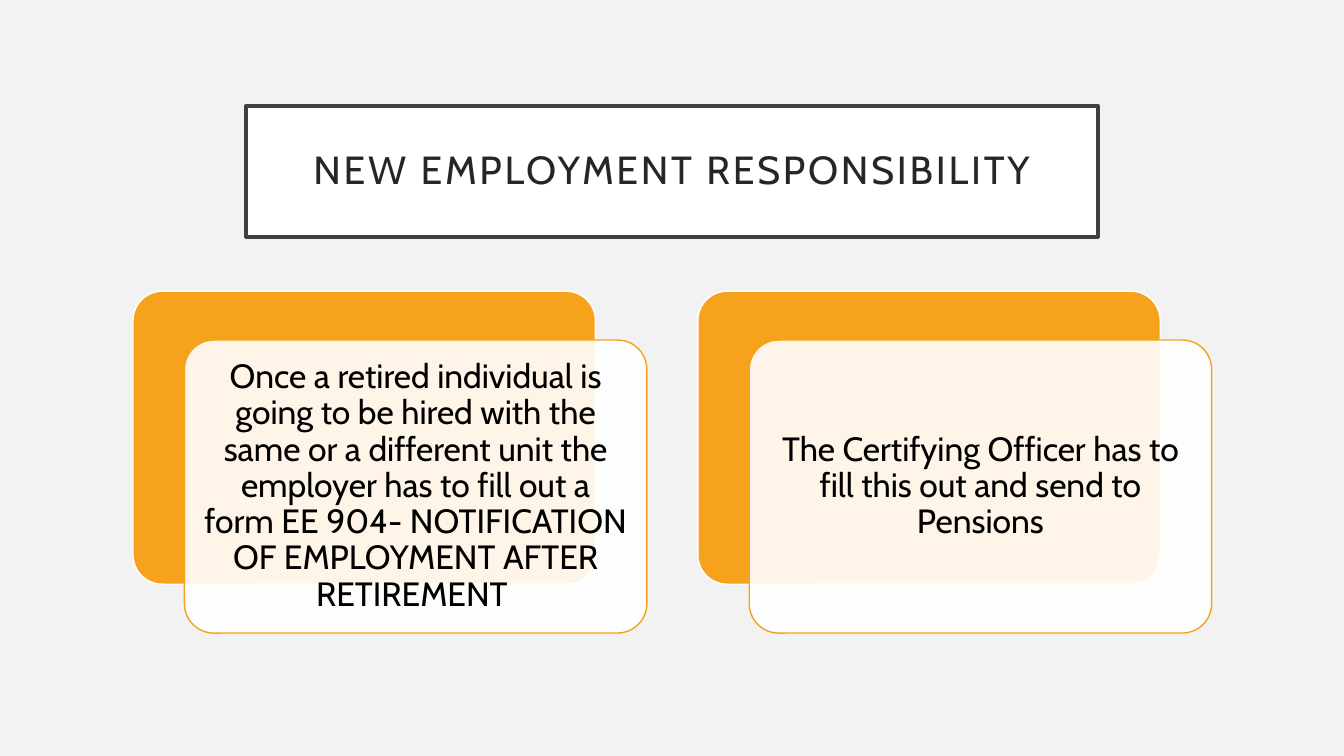
from lxml.etree import SubElement
from pptx import Presentation
from pptx.dml.color import RGBColor
from pptx.enum.shapes import MSO_SHAPE
from pptx.enum.text import MSO_ANCHOR, MSO_AUTO_SIZE, PP_ALIGN
from pptx.oxml.ns import qn
from pptx.util import Pt

FONT = "Cabin"
ORANGE = "F6A21D"
WHITE = "FFFFFF"
TITLE = "NEW EMPLOYMENT RESPONSIBILITY"
STEPS = [
    "Once a retired individual is going to be hired with the same or a different unit "
    "the employer has to fill out a form EE 904- NOTIFICATION OF EMPLOYMENT AFTER RETIREMENT ",
    "The Certifying Officer has to fill this out and send to Pensions",
]


def color(value):
    """Turn a hex string into a colour."""
    return RGBColor.from_string(value)


def set_attributes(target, values):
    """Set every attribute named in a dict of format values."""
    for name, value in values.items():
        setattr(target, name, value)


def paint(shape, fill, line, width):
    """Give a shape a solid fill and an outline."""
    shape.fill.solid()
    shape.fill.fore_color.rgb = color(fill)
    shape.line.color.rgb = color(line)
    shape.line.width = Pt(width)


def write(shape, text, size, text_color, margin):
    """Write one centred paragraph into a shape and return its run."""
    frame = shape.text_frame
    set_attributes(frame, {
        "word_wrap": True,
        "auto_size": MSO_AUTO_SIZE.NONE,
        "vertical_anchor": MSO_ANCHOR.MIDDLE,
        "margin_left": Pt(margin),
        "margin_right": Pt(margin),
        "margin_top": Pt(margin),
        "margin_bottom": Pt(margin),
    })
    paragraph = frame.paragraphs[0]
    set_attributes(paragraph, {"alignment": PP_ALIGN.CENTER, "line_spacing": 0.9})
    run = paragraph.add_run()
    run.text = text
    set_attributes(run.font, {"name": FONT, "size": Pt(size)})
    run.font.color.rgb = color(text_color)
    return run


def add_title(slide, left, top, width, height):
    """Place the framed title in its box."""
    title = slide.shapes.title
    set_attributes(title, {"left": Pt(left), "top": Pt(top),
                           "width": Pt(width), "height": Pt(height)})
    paint(title, WHITE, "404040", 2.5)
    run = write(title, TITLE, 28, "262626", 14.4)
    run.font._element.set("spc", "200")


def add_panel(slide, left, top, width, height, fill, line):
    """Add one rounded panel."""
    panel = slide.shapes.add_shape(MSO_SHAPE.ROUNDED_RECTANGLE,
                                   Pt(left), Pt(top), Pt(width), Pt(height))
    panel.adjustments[0] = 0.1
    panel.shadow.inherit = False
    paint(panel, fill, line, 1)
    return panel


def add_step(slide, text, left, top, width, height):
    """Fill a box with an orange panel and a translucent text card over it."""
    shift_x, shift_y = 36.72, 34.9
    size = (width - shift_x, height - shift_y)
    add_panel(slide, left, top, *size, ORANGE, WHITE)
    card = add_panel(slide, left + shift_x, top + shift_y, *size, WHITE, ORANGE)
    fill_color = card.fill._xPr.find(qn("a:solidFill"))[0]
    SubElement(fill_color, qn("a:alpha")).set("val", "90000")
    write(card, text, 24, "000000", 7.2)


def add_steps(slide, left, top, width, height, gap):
    """Share a region between the steps in equal columns."""
    step_width = (width - gap * (len(STEPS) - 1)) / len(STEPS)
    for index, text in enumerate(STEPS):
        add_step(slide, text, left + index * (step_width + gap), top, step_width, height)


def main():
    """Build the slide and save it."""
    presentation = Presentation()
    set_attributes(presentation, {"slide_width": Pt(960), "slide_height": Pt(540)})
    slide = presentation.slides.add_slide(presentation.slide_layouts[5])
    slide.background.fill.solid()
    slide.background.fill.fore_color.rgb = color("F2F2F2")
    add_title(slide, 175.8, 75.6, 608.4, 93.6)
    add_steps(slide, 95, 208, 770.5, 244.2, 36.4)
    presentation.save("out.pptx")


if __name__ == "__main__":
    main()
